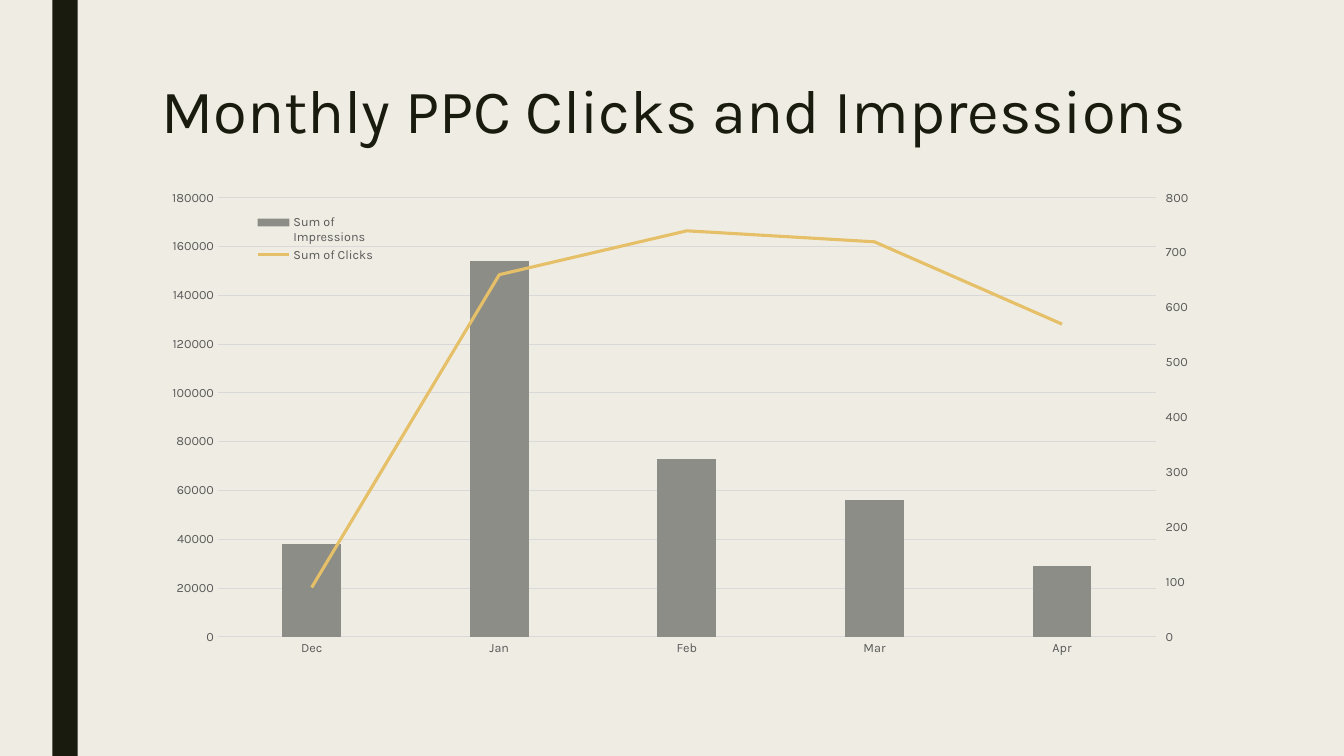
from copy import deepcopy
from dataclasses import dataclass

from pptx import Presentation
from pptx import util as u
from pptx.chart.data import CategoryChartData
from pptx.dml.color import RGBColor
from pptx.enum import chart as c
from pptx.enum import shapes, text
from pptx.oxml import parse_xml
from pptx.oxml.ns import nsdecls, qn


@dataclass(frozen=True)
class Theme:
    font: str = "Karla"
    background: str = "EFEDE3"
    dark: str = "191B0E"
    label: str = "595959"
    grid: str = "D9D9D9"
    columns: str = "8C8D86"
    line: str = "E6C069"
    title_size: int = 44
    chart_size: int = 10
    label_size: int = 9


THEME = Theme()
MONTHS = ["Dec", "Jan", "Feb", "Mar", "Apr"]
IMPRESSIONS = [38000, 154000, 73000, 56000, 29000]
CLICKS = [90, 660, 740, 720, 570]


def rgb(color):
    return RGBColor.from_string(color)


def style_font(font, size, color):
    font.name = THEME.font
    font.size = u.Pt(size)
    font.color.rgb = rgb(color)


def style_line(line, color, width):
    line.color.rgb = rgb(color)
    line.width = u.Pt(width)


def place(shape, left, top, width, height):
    shape.left, shape.top = u.Inches(left), u.Inches(top)
    shape.width, shape.height = u.Inches(width), u.Inches(height)


def add_side_band(slide, height):
    band = slide.shapes.add_shape(
        shapes.MSO_SHAPE.RECTANGLE, u.Inches(0.52), 0, u.Inches(0.25), height)
    band.shadow.inherit = False
    band.fill.solid()
    band.fill.fore_color.rgb = rgb(THEME.dark)
    band.line.fill.background()


def set_title(slide, wording):
    title = slide.shapes.title
    place(title, 1.5, 0.75, 10.5, 1.62)
    frame = title.text_frame
    frame.text = wording
    frame.word_wrap = True
    frame.auto_size = text.MSO_AUTO_SIZE.NONE
    frame.vertical_anchor = text.MSO_ANCHOR.TOP
    paragraph = frame.paragraphs[0]
    paragraph.alignment = text.PP_ALIGN.LEFT
    paragraph.line_spacing = 0.89
    style_font(paragraph.runs[0].font, THEME.title_size, THEME.dark)


def set_layout(element, index, x, y, w, h, inner=False):
    """Give a plot area or legend a fixed place, in fractions of the chart."""
    for old in element.findall(qn("c:layout")):
        element.remove(old)
    target = '<c:layoutTarget val="inner"/>' if inner else ""
    element.insert(index, parse_xml(
        f'<c:layout {nsdecls("c")}><c:manualLayout>{target}'
        '<c:xMode val="edge"/><c:yMode val="edge"/>'
        f'<c:x val="{x}"/><c:y val="{y}"/><c:w val="{w}"/><c:h val="{h}"/>'
        '</c:manualLayout></c:layout>'))


def style_axes(chart):
    for axis in (chart.category_axis, chart.value_axis):
        axis.major_tick_mark = axis.minor_tick_mark = c.XL_TICK_MARK.NONE
        style_font(axis.tick_labels.font, THEME.label_size, THEME.label)
    style_line(chart.category_axis.format.line, THEME.grid, 0.75)
    value_axis = chart.value_axis
    value_axis.minimum_scale, value_axis.maximum_scale = 0, 180000
    value_axis.major_unit = 20000
    value_axis.format.line.fill.background()
    value_axis.has_major_gridlines = True
    style_line(value_axis.major_gridlines.format.line, THEME.grid, 0.75)


def move_last_series_to_right_axis(chart, maximum, unit):
    """Turn the last column series into a line with its own value axis."""
    plot_area = chart.value_axis._element.getparent()
    bars = plot_area.find(qn("c:barChart"))
    series = bars.findall(qn("c:ser"))[-1]
    for invert in series.findall(qn("c:invertIfNegative")):
        series.remove(invert)
    lines = parse_xml(
        f'<c:lineChart {nsdecls("c")}><c:grouping val="standard"/>'
        '<c:varyColors val="0"/><c:marker val="1"/>'
        '<c:axId val="5001"/><c:axId val="5002"/></c:lineChart>')
    lines.insert(2, series)
    bars.addnext(lines)

    category_axis = deepcopy(chart.category_axis._element)
    value_axis = deepcopy(chart.value_axis._element)
    value_axis.remove(value_axis.find(qn("c:majorGridlines")))
    for axis, own, other in ((category_axis, "5001", "5002"),
                             (value_axis, "5002", "5001")):
        axis.find(qn("c:axId")).set("val", own)
        axis.find(qn("c:crossAx")).set("val", other)
    category_axis.find(qn("c:delete")).set("val", "1")
    for tag, value in (("c:axPos", "r"), ("c:crosses", "max"),
                       ("c:majorTickMark", "out"), ("c:majorUnit", str(unit))):
        value_axis.find(qn(tag)).set("val", value)
    value_axis.find(qn("c:scaling")).find(qn("c:max")).set("val", str(maximum))
    chart.value_axis._element.addnext(category_axis)
    category_axis.addnext(value_axis)


def add_legend(chart):
    chart.has_legend = True
    legend = chart.legend
    legend.position = c.XL_LEGEND_POSITION.BOTTOM
    legend.include_in_layout = True
    style_font(legend.font, THEME.label_size, THEME.label)
    set_layout(legend._element, 1, 0.09, 0.06, 0.13, 0.1)


def add_clicks_chart(slide):
    data = CategoryChartData()
    data.categories = MONTHS
    data.add_series("Sum of Impressions", IMPRESSIONS)
    data.add_series("Sum of Clicks", CLICKS)
    frame = slide.shapes.add_chart(
        c.XL_CHART_TYPE.COLUMN_CLUSTERED, u.Inches(1.5), u.Inches(1.79),
        u.Inches(10.5), u.Inches(5.26), data)
    chart = frame.chart
    chart.has_title = False
    style_font(chart.font, THEME.chart_size, "000000")
    style_axes(chart)
    move_last_series_to_right_axis(chart, 800, 100)

    columns, lines = chart.plots
    columns.gap_width = 219
    columns.vary_by_categories = False
    fill = columns.series[0].format.fill
    fill.solid()
    fill.fore_color.rgb = rgb(THEME.columns)
    clicks = lines.series[0]
    clicks.smooth = False
    clicks.marker.style = c.XL_MARKER_STYLE.NONE
    style_line(clicks.format.line, THEME.line, 2.25)

    add_legend(chart)
    plot_area = chart.value_axis._element.getparent()
    set_layout(plot_area, 0, 0.063, 0.033, 0.886, 0.828, inner=True)


def main():
    presentation = Presentation()
    presentation.slide_width = u.Inches(13.33)
    presentation.slide_height = u.Inches(7.5)
    slide = presentation.slides.add_slide(presentation.slide_layouts[5])
    slide.background.fill.solid()
    slide.background.fill.fore_color.rgb = rgb(THEME.background)
    add_side_band(slide, presentation.slide_height)
    set_title(slide, "Monthly PPC Clicks and Impressions")
    add_clicks_chart(slide)
    presentation.save("out.pptx")


if __name__ == "__main__":
    main()
